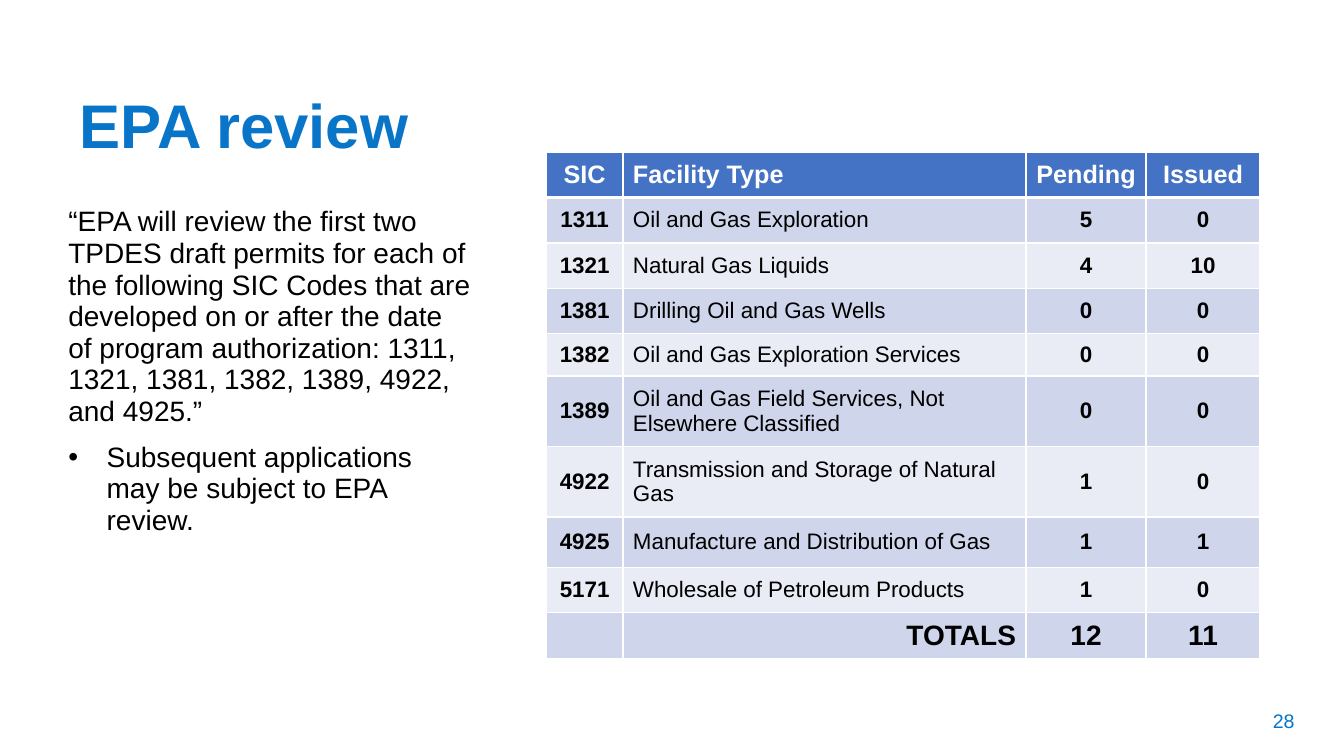
from dataclasses import dataclass

from lxml import etree
from pptx import Presentation
from pptx.dml.color import RGBColor
from pptx.enum.text import MSO_ANCHOR, PP_ALIGN
from pptx.oxml.ns import qn
from pptx.util import Inches, Pt

LEFT, CENTER, RIGHT = PP_ALIGN.LEFT, PP_ALIGN.CENTER, PP_ALIGN.RIGHT
TOP, MIDDLE = MSO_ANCHOR.TOP, MSO_ANCHOR.MIDDLE


@dataclass(frozen=True)
class Theme:
    font: str = "Arial"
    accent: str = "0875C8"
    ink: str = "000000"
    white: str = "FFFFFF"
    header: str = "4472C4"
    bands: tuple[str, str] = ("CFD5EA", "E9EBF5")
    title_pt: int = 44
    body_pt: int = 20
    header_pt: int = 18
    cell_pt: int = 16
    number_pt: int = 14
    rule_pt: int = 1
    header_rule_pt: int = 3


@dataclass(frozen=True)
class Box:
    """A frame in percent of the slide's width and height."""
    left: float
    top: float
    width: float
    height: float


@dataclass(frozen=True)
class Column:
    width: float
    align: PP_ALIGN
    bold: bool = True


@dataclass(frozen=True)
class Facility:
    sic: str
    name: str
    pending: int
    issued: int
    height: float = 6


THEME = Theme()
TITLE = Box(5.18, 12, 87.98, 10)
BODY = Box(4.35, 26.67, 31.43, 63.47)
NUMBER = Box(92.18, 92.67, 6.68, 5.33)
TABLE_LEFT, TABLE_TOP, ROW = 40.65, 20.13, 6
BULLET_INDENT = 2.85
COLUMNS = [Column(5.7, CENTER), Column(30, LEFT, bold=False),
           Column(8.93, CENTER), Column(8.48, CENTER)]
HEADINGS = ["SIC", "Facility Type", "Pending", "Issued"]
FACILITIES = [
    Facility("1311", "Oil and Gas Exploration", 5, 0),
    Facility("1321", "Natural Gas Liquids", 4, 10),
    Facility("1381", "Drilling Oil and Gas Wells", 0, 0),
    Facility("1382", "Oil and Gas Exploration Services", 0, 0, 5.6),
    Facility("1389", "Oil and Gas Field Services, Not Elsewhere Classified", 0, 0, 9.33),
    Facility("4922", "Transmission and Storage of Natural Gas", 1, 0, 9.33),
    Facility("4925", "Manufacture and Distribution of Gas", 1, 1, 6.67),
    Facility("5171", "Wholesale of Petroleum Products", 1, 0),
]
QUOTE = ("“EPA will review the first two TPDES draft permits for each of the following "
         "SIC Codes that are developed on or after the date of program authorization: "
         "1311, 1321, 1381, 1382, 1389, 4922, and 4925.”")
FOLLOW_UP = "Subsequent applications may be subject to EPA review."

prs = Presentation()
prs.slide_width, prs.slide_height = Inches(13.333), Inches(7.5)


def across(percent: float) -> int:
    return round(prs.slide_width * percent / 100)


def down(percent: float) -> int:
    return round(prs.slide_height * percent / 100)


def write(p, text: str, *, size: int, color: str = THEME.ink, bold: bool = False,
          align: PP_ALIGN = LEFT, spacing: float = 1, before: int = 0) -> None:
    p.alignment, p.line_spacing, p.space_before = align, spacing, Pt(before)
    r = p.add_run()
    r.text = text
    r.font.name, r.font.size, r.font.bold = THEME.font, Pt(size), bold
    r.font.color.rgb = RGBColor.from_string(color)


def add_bullet(p) -> None:
    pPr = p._p.get_or_add_pPr()
    pPr.set("marL", str(across(BULLET_INDENT)))
    pPr.set("indent", str(-across(BULLET_INDENT)))
    etree.SubElement(pPr, qn("a:buFont"), typeface=THEME.font)
    etree.SubElement(pPr, qn("a:buChar"), char="•")


def add_frame(s, box: Box, anchor: MSO_ANCHOR = MIDDLE):
    sp = s.shapes.add_textbox(across(box.left), down(box.top),
                              across(box.width), down(box.height))
    tf = sp.text_frame
    tf.word_wrap, tf.vertical_anchor = True, anchor
    return tf


def add_borders(cell, top: int, bottom: int) -> None:
    tcPr = cell._tc.get_or_add_tcPr()
    widths = {"a:lnL": THEME.rule_pt, "a:lnR": THEME.rule_pt, "a:lnT": top, "a:lnB": bottom}
    for i, (tag, width) in enumerate(widths.items()):
        ln = etree.Element(qn(tag), w=str(Pt(width)))
        fill = etree.SubElement(ln, qn("a:solidFill"))
        etree.SubElement(fill, qn("a:srgbClr"), val=THEME.white)
        tcPr.insert(i, ln)


def add_permit_table(s) -> None:
    totals = ["", "TOTALS", str(sum(f.pending for f in FACILITIES)),
              str(sum(f.issued for f in FACILITIES))]
    rows = [HEADINGS, *([f.sic, f.name, str(f.pending), str(f.issued)] for f in FACILITIES),
            totals]
    heights = [ROW, *(f.height for f in FACILITIES), ROW]
    table = s.shapes.add_table(
        len(rows), len(COLUMNS), across(TABLE_LEFT), down(TABLE_TOP),
        across(sum(c.width for c in COLUMNS)), down(sum(heights))).table
    table.horz_banding = False
    for i, column in enumerate(COLUMNS):
        table.columns[i].width = across(column.width)
    for y, (texts, height) in enumerate(zip(rows, heights)):
        table.rows[y].height = down(height)
        is_header, is_total = y == 0, texts is totals
        size = (THEME.header_pt if is_header else
                THEME.body_pt if is_total else THEME.cell_pt)
        for x, (text, column) in enumerate(zip(texts, COLUMNS)):
            cell = table.cell(y, x)
            cell.vertical_anchor = MIDDLE
            cell.fill.solid()
            cell.fill.fore_color.rgb = RGBColor.from_string(
                THEME.header if is_header else THEME.bands[(y - 1) % 2])
            add_borders(cell, THEME.header_rule_pt if y == 1 else THEME.rule_pt,
                        THEME.header_rule_pt if is_header else THEME.rule_pt)
            if text:
                write(cell.text_frame.paragraphs[0], text, size=size,
                      color=THEME.white if is_header else THEME.ink,
                      bold=column.bold or is_header or is_total,
                      align=RIGHT if is_total and x == 1 else column.align)


def main() -> None:
    s = prs.slides.add_slide(prs.slide_layouts[6])
    write(add_frame(s, NUMBER).paragraphs[0], "28", size=THEME.number_pt,
          color=THEME.accent, align=CENTER)
    write(add_frame(s, TITLE).paragraphs[0], "EPA review", size=THEME.title_pt,
          color=THEME.accent, bold=True, spacing=0.9)
    tf = add_frame(s, BODY, TOP)
    write(tf.paragraphs[0], QUOTE, size=THEME.body_pt, spacing=0.94)
    p = tf.add_paragraph()
    add_bullet(p)
    write(p, FOLLOW_UP, size=THEME.body_pt, spacing=0.94, before=10)
    add_permit_table(s)
    prs.save("out.pptx")


if __name__ == "__main__":
    main()
